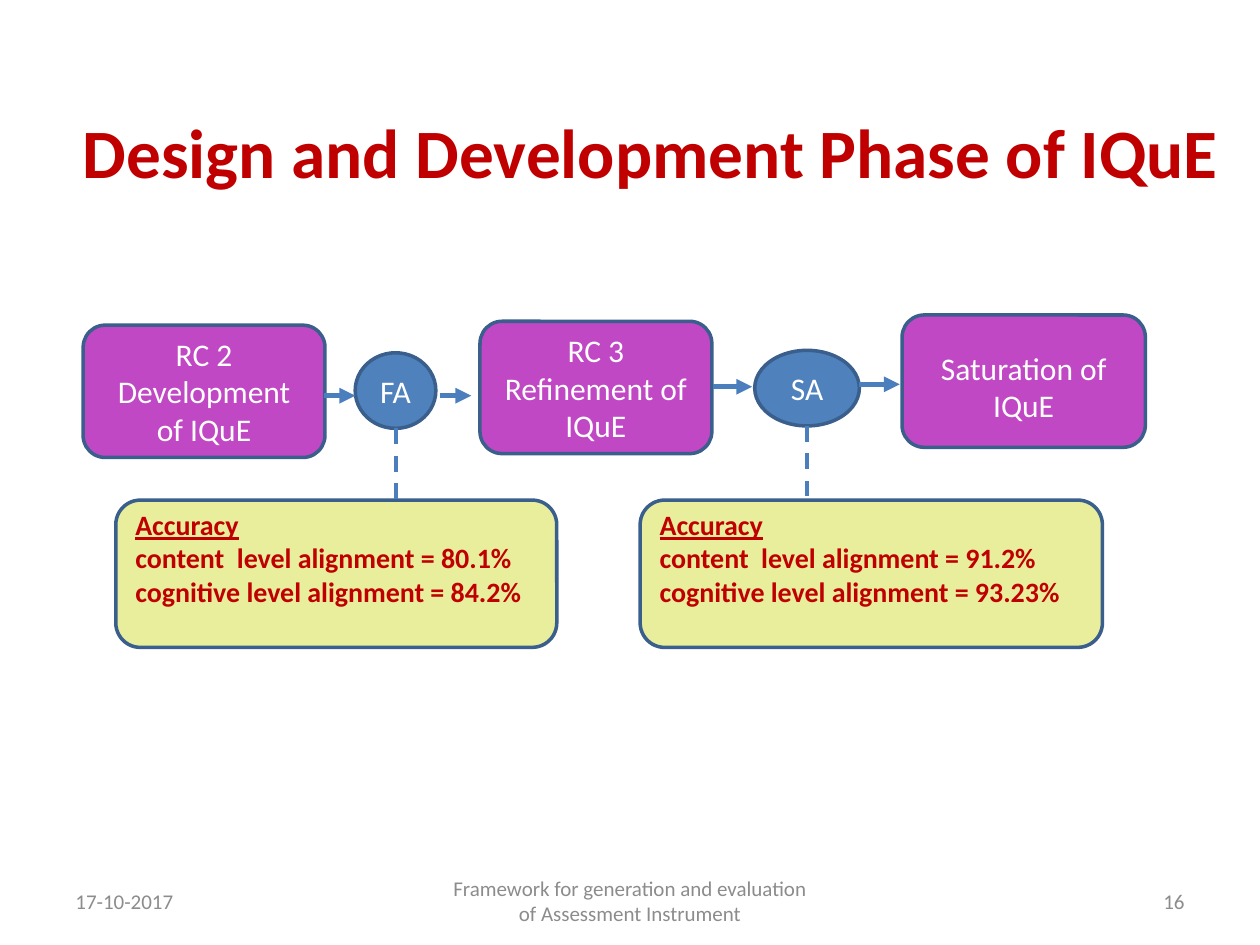
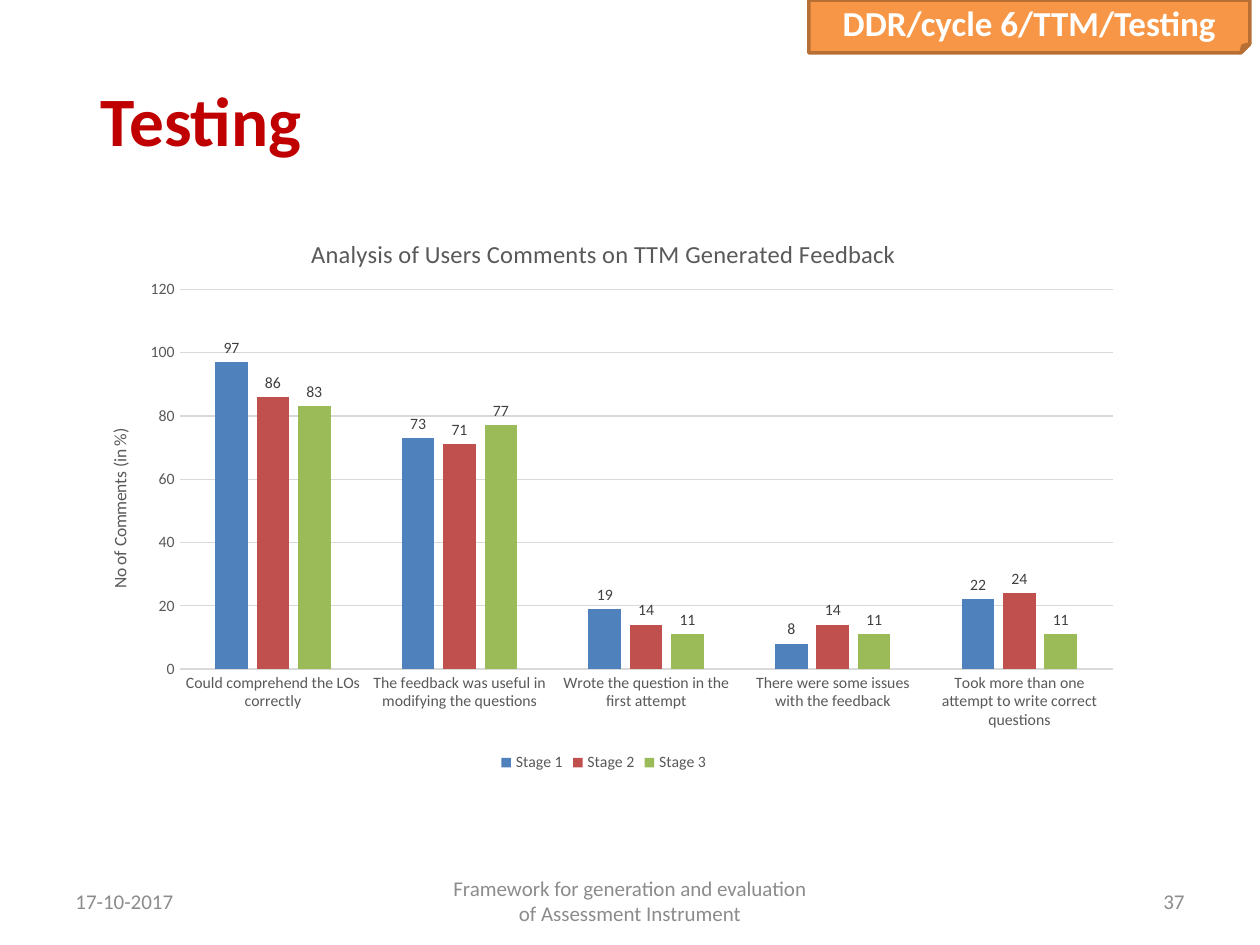
from lxml import etree
from pptx import Presentation, util as u
from pptx.chart.data import CategoryChartData
from pptx.dml import color as dml_color
from pptx.enum import chart as charts, dml, shapes, text as texts
from pptx.oxml import ns

Pt = u.Pt
FONT = "Calibri"
RED, WHITE, FOOTER_GRAY = "C00000", "FFFFFF", "8C8C8C"
PURPLE, BLUE, YELLOW, ORANGE = "C148C4", "4F81BD", "E8EE9C", "F79646"
OUTLINE, CONNECTOR = "3A5F8C", "4B7EBC"
AXIS_TEXT, GRID, LABEL_TEXT = "595959", "D9D9D9", "404040"
LEFT, CENTER, RIGHT = texts.PP_ALIGN.LEFT, texts.PP_ALIGN.CENTER, texts.PP_ALIGN.RIGHT
PRESET = shapes.MSO_SHAPE


def color(hex_value):
    return dml_color.RGBColor.from_string(hex_value)


def add_text(slide, content, box, preset=None, fill=None, outline=OUTLINE, size=18,
             ink=WHITE, bold=False, align=CENTER, anchor=texts.MSO_ANCHOR.MIDDLE,
             margin_top=3.6, underline_first=False):
    """Put text, one paragraph per line, in a text box or a preset shape."""
    box = [Pt(length) for length in box]
    if preset is None:
        shape = slide.shapes.add_textbox(*box)
    else:
        shape = slide.shapes.add_shape(preset, *box)
        shape.shadow.inherit = False
        shape.fill.solid()
        shape.fill.fore_color.rgb = color(fill)
        shape.line.color.rgb = color(outline)
        shape.line.width = Pt(2)
    frame = shape.text_frame
    frame.word_wrap = True
    frame.vertical_anchor = anchor
    frame.margin_top = Pt(margin_top)
    for index, line in enumerate(content.split("\n")):
        paragraph = frame.add_paragraph() if index else frame.paragraphs[0]
        paragraph.alignment = align
        run = paragraph.add_run()
        run.text = line
        run.font.name, run.font.size, run.font.bold = FONT, Pt(size), bold
        run.font.color.rgb = color(ink)
        run.font.underline = underline_first and index == 0


presentation = Presentation()
presentation.slide_width, presentation.slide_height = Pt(720), Pt(540)
blank_layout = presentation.slide_layouts[6]

# Titles and footers of both slides
slides = []
for title, title_box, number in [
    ("Design and Development Phase of IQuE", (36, 53.3, 671.8, 66.2), "16"),
    ("Testing", (34, 51.8, 162, 32.4), "37"),
]:
    slide = presentation.slides.add_slide(blank_layout)
    slides.append(slide)
    add_text(slide, title, title_box, size=39.6, ink=RED, bold=True)
    for footer, left, width, align in [
        ("17-10-2017", 36, 168, LEFT),
        ("Framework for generation and evaluation of Assessment Instrument", 246, 228, CENTER),
        (number, 516, 168, RIGHT),
    ]:
        add_text(slide, footer, (left, 500.4, width, 28.8),
                 size=12, ink=FOOTER_GRAY, align=align)
phase_slide, testing_slide = slides

# Research cycles
for cycle, left, top, width, margin_top in [
    ("RC 2\nDevelopment of IQuE", 47.5, 185.8, 138.2, 3.6),
    ("RC 3\nRefinement of IQuE", 274.3, 183.6, 132.5, 3.6),
    ("Saturation of IQuE", 515.5, 180, 139, 9.6),
]:
    add_text(phase_slide, cycle, (left, top, width, 75.6), PRESET.ROUNDED_RECTANGLE,
             PURPLE, margin_top=margin_top)

# Analyses with their accuracy, joined by a dashed line
links = []
for name, left, top, width, note_left, note_width, content_level, cognitive_level in [
    ("FA", 203, 201.6, 46.1, 66.2, 252, "80.1%", "84.2%"),
    ("SA", 431.3, 200.2, 59.8, 365.8, 264.2, "91.2%", "93.23%"),
]:
    add_text(phase_slide, name, (left, top, width, 43.2), PRESET.OVAL, BLUE)
    add_text(phase_slide,
             f"Accuracy\ncontent  level alignment = {content_level}\n"
             f"cognitive level alignment = {cognitive_level}",
             (note_left, 285.8, note_width, 84.2), PRESET.ROUNDED_RECTANGLE, YELLOW,
             size=16, ink=RED, bold=True, align=LEFT, anchor=texts.MSO_ANCHOR.TOP,
             margin_top=0, underline_first=True)
    middle, bottom = left + width / 2, top + 43.2
    links.append((middle, bottom, middle, bottom + 40.3, True))

# Arrows along the row
for start, end, height in [(185, 203, 226.1), (251.3, 269.3, 226.1),
                           (407.5, 429.8, 221), (491, 514.1, 219.6)]:
    links.append((start, height, end, height, False))

for *ends, dashed in links:
    connector = phase_slide.shapes.add_connector(
        shapes.MSO_CONNECTOR.STRAIGHT, *[Pt(end) for end in ends])
    connector.line.color.rgb = color(CONNECTOR)
    connector.line.width = Pt(2.25 if dashed else 3)
    properties = connector.element.spPr
    if dashed:
        connector.line.dash_style = dml.MSO_LINE.DASH
    else:
        outline = properties.find(ns.qn("a:ln"))
        etree.SubElement(outline, ns.qn("a:tailEnd"), type="triangle")
    etree.SubElement(properties, ns.qn("a:effectLst"))

# Banner of the testing slide
add_text(testing_slide, "DDR/cycle 6/TTM/Testing", (462.2, 0, 252, 30.2),
         PRESET.FOLDED_CORNER, ORANGE, outline="B76F34", size=20, bold=True)

# Chart of user comments
data = CategoryChartData()
data.categories = [
    "Could comprehend the LOs correctly",
    "The feedback was useful in modifying the questions",
    "Wrote the question in the first attempt",
    "There were some issues with the feedback",
    "Took more than one attempt to write correct questions",
]
stages = [
    ("Stage 1", (97, 73, 19, 8, 22), BLUE),
    ("Stage 2", (86, 71, 14, 14, 24), "C0504D"),
    ("Stage 3", (83, 77, 11, 11, 11), "9BBB59"),
]
for name, values, _ in stages:
    data.add_series(name, values)
chart = testing_slide.shapes.add_chart(
    charts.XL_CHART_TYPE.COLUMN_CLUSTERED, Pt(42), Pt(120), Pt(606), Pt(324), data).chart
chart.font.name, chart.font.size = FONT, Pt(10)

plot = chart.plots[0]
plot.gap_width, plot.overlap = 219, -27
plot.vary_by_categories = False
for series, (_, _, fill) in zip(plot.series, stages):
    series.format.fill.solid()
    series.format.fill.fore_color.rgb = color(fill)
    labels = series.data_labels
    labels.show_value = True
    labels.position = charts.XL_LABEL_POSITION.OUTSIDE_END
    labels.font.name, labels.font.size = FONT, Pt(9)
    labels.font.color.rgb = color(LABEL_TEXT)

# Axes and legend
category_axis, value_axis = chart.category_axis, chart.value_axis
chart.has_legend = True
chart.legend.position = charts.XL_LEGEND_POSITION.BOTTOM
chart.legend.include_in_layout = False
for axis in (category_axis, value_axis):
    axis.major_tick_mark = charts.XL_TICK_MARK.NONE
for font in (category_axis.tick_labels.font, value_axis.tick_labels.font, chart.legend.font):
    font.name, font.size = FONT, Pt(9)
    font.color.rgb = color(AXIS_TEXT)
value_axis.minimum_scale, value_axis.maximum_scale, value_axis.major_unit = 0, 120, 20
value_axis.format.line.fill.background()
for line in (category_axis.format.line, value_axis.major_gridlines.format.line):
    line.color.rgb = color(GRID)
    line.width = Pt(0.75)

# Chart and axis titles
for owner, caption, size in [
    (chart, "Analysis of Users Comments on TTM Generated Feedback", 14),
    (value_axis, "No of Comments (in %)", 10),
]:
    title = chart.chart_title if owner is chart else value_axis.axis_title
    title.text_frame.text = caption
    font = title.text_frame.paragraphs[0].runs[0].font
    font.name, font.size, font.bold = FONT, Pt(size), False
    font.color.rgb = color(AXIS_TEXT)

# Fixed places inside the chart, as fractions of its size
plot_area = chart.element.find(".//" + ns.qn("c:plotArea"))
chart_title, axis_title = chart.element.findall(".//" + ns.qn("c:title"))
for part, place in [
    (plot_area, {"x": 0.1, "y": 0.14, "w": 0.88, "h": 0.67}),
    (chart_title, {"x": 0.22, "y": 0.04}),
    (axis_title, {"x": 0.03, "y": 0.38}),
]:
    layout = part.find(ns.qn("c:layout"))
    if layout is None:
        layout = etree.Element(ns.qn("c:layout"))
        part.insert(0 if part is plot_area else 1, layout)
    manual = etree.SubElement(layout, ns.qn("c:manualLayout"))
    if part is plot_area:
        etree.SubElement(manual, ns.qn("c:layoutTarget"), val="inner")
    for key in ("x", "y"):
        etree.SubElement(manual, ns.qn(f"c:{key}Mode"), val="edge")
    for key, fraction in place.items():
        etree.SubElement(manual, ns.qn(f"c:{key}"), val=str(fraction))

presentation.save("out.pptx")
